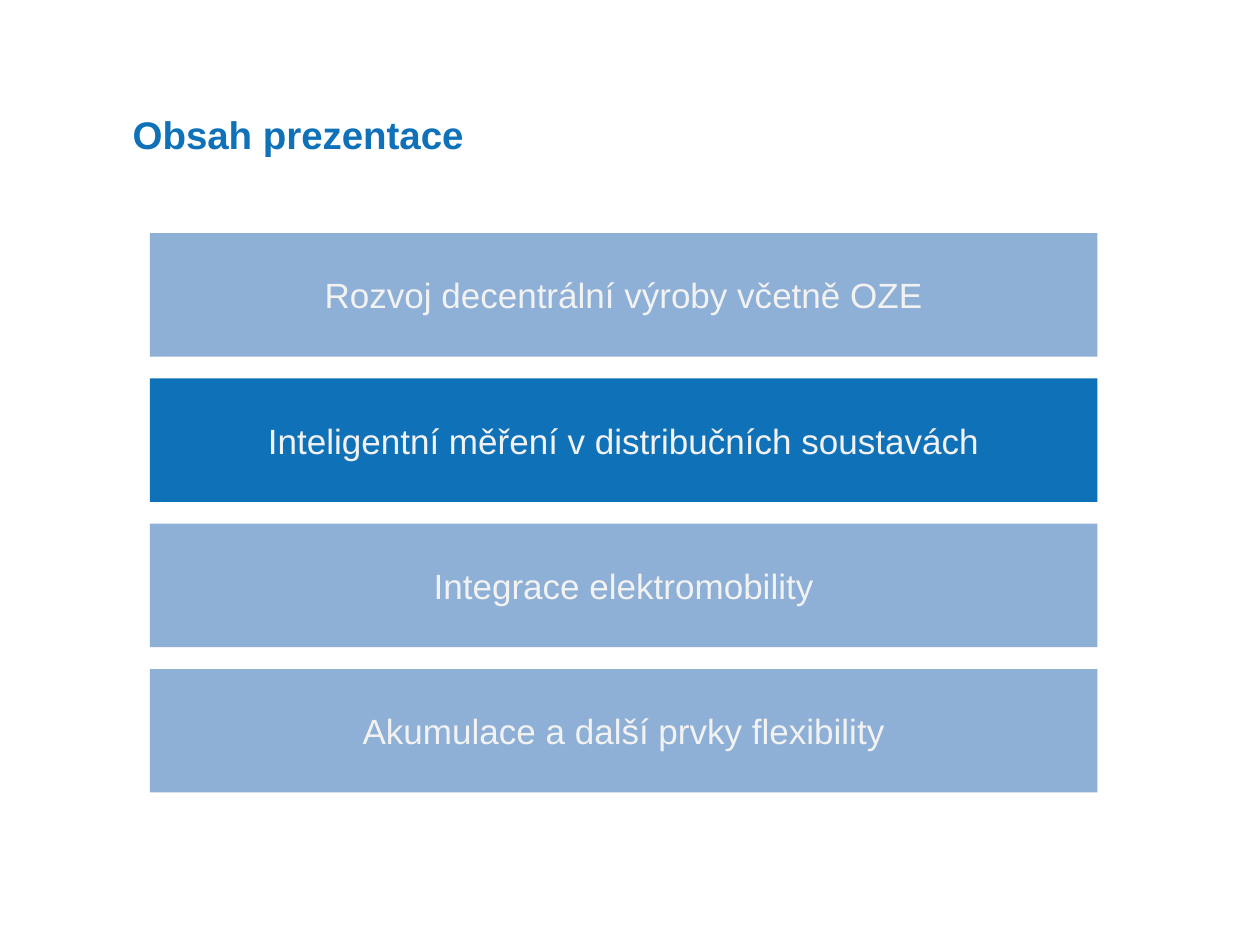
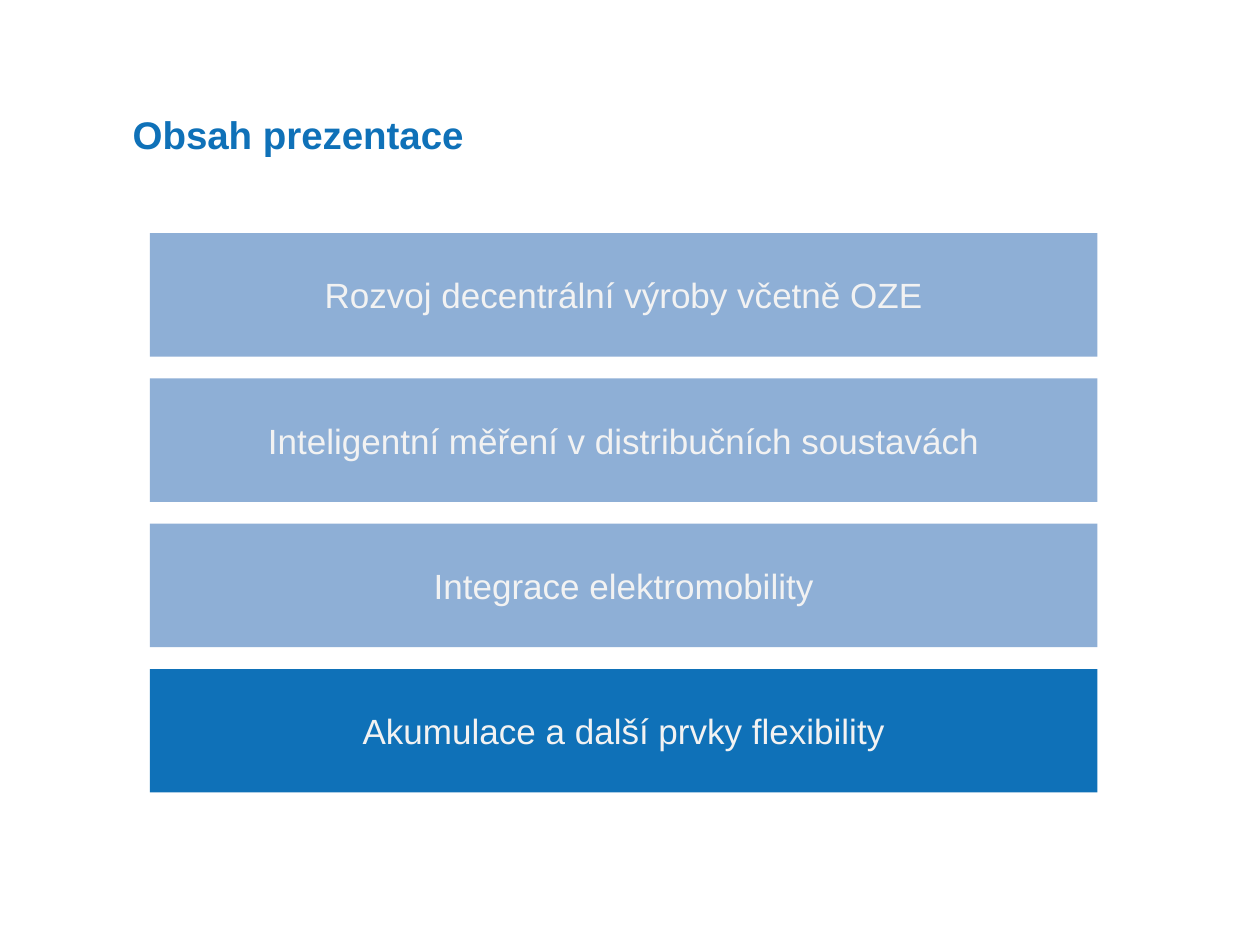
from pptx import Presentation
from pptx.dml.color import RGBColor
from pptx.enum.shapes import MSO_SHAPE
from pptx.enum.text import MSO_ANCHOR, PP_ALIGN
from pptx.util import Inches, Pt

BLUE = RGBColor(0x0F, 0x71, 0xB8)
PALE_BLUE = RGBColor(0x8E, 0xAF, 0xD6)
LIGHT_GREY = RGBColor(0xF2, 0xF2, 0xF2)
WHITE = RGBColor(0xFF, 0xFF, 0xFF)

TITLE = "Obsah prezentace"
TOPICS = [
    "Rozvoj decentrální výroby včetně OZE",
    "Inteligentní měření v distribučních soustavách",
    "Integrace elektromobility",
    "Akumulace a další prvky flexibility",
]
CURRENT_TOPICS = [1, 3]
FIRST_TOP, LAST_TOP = 1.85, 5.31


class AgendaDeck:
    """Holds the agenda style and the slide being built."""

    font_name = "Arial"
    title_size = Pt(22)
    topic_size = Pt(20)

    def __init__(self):
        self.deck = Presentation()
        self.deck.slide_width = Inches(10)
        self.deck.slide_height = Inches(7.5)
        self.page = None

    def add_page(self):
        self.page = self.deck.slides.add_slide(self.deck.slide_layouts[6])

    def add_text(self, box, text, size, color, align, anchor, insets, bold=False):
        frame = box.text_frame
        frame.word_wrap = True
        frame.vertical_anchor = anchor
        (frame.margin_left, frame.margin_top,
         frame.margin_right, frame.margin_bottom) = map(Inches, insets)
        para = frame.paragraphs[0]
        para.alignment = align
        span = para.add_run()
        span.text = text
        span.font.name = self.font_name
        span.font.size = size
        span.font.bold = bold
        span.font.color.rgb = color

    def add_title(self, text):
        box = self.page.shapes.add_textbox(
            Inches(0), Inches(0), Inches(3.84), Inches(1.3))
        box.fill.solid()
        box.fill.fore_color.rgb = WHITE
        self.add_text(box, text, self.title_size, BLUE, PP_ALIGN.RIGHT,
                      MSO_ANCHOR.BOTTOM, (0.12, 0.39, 0.16, 0.12), bold=True)

    def add_topic(self, text, top, current):
        box = self.page.shapes.add_shape(
            MSO_SHAPE.RECTANGLE,
            Inches(1.19), Inches(top), Inches(7.52), Inches(0.98))
        box.shadow.inherit = False
        box.fill.solid()
        box.fill.fore_color.rgb = BLUE if current else PALE_BLUE
        box.line.fill.background()
        self.add_text(box, text, self.topic_size, LIGHT_GREY, PP_ALIGN.CENTER,
                      MSO_ANCHOR.MIDDLE, (0.12, 0.04, 0.12, 0.04))


def main():
    agenda = AgendaDeck()
    pitch = (LAST_TOP - FIRST_TOP) / (len(TOPICS) - 1)
    for current in CURRENT_TOPICS:
        agenda.add_page()
        agenda.add_title(TITLE)
        for index, topic in enumerate(TOPICS):
            agenda.add_topic(topic, FIRST_TOP + index * pitch, index == current)
    agenda.deck.save("out.pptx")


if __name__ == "__main__":
    main()
